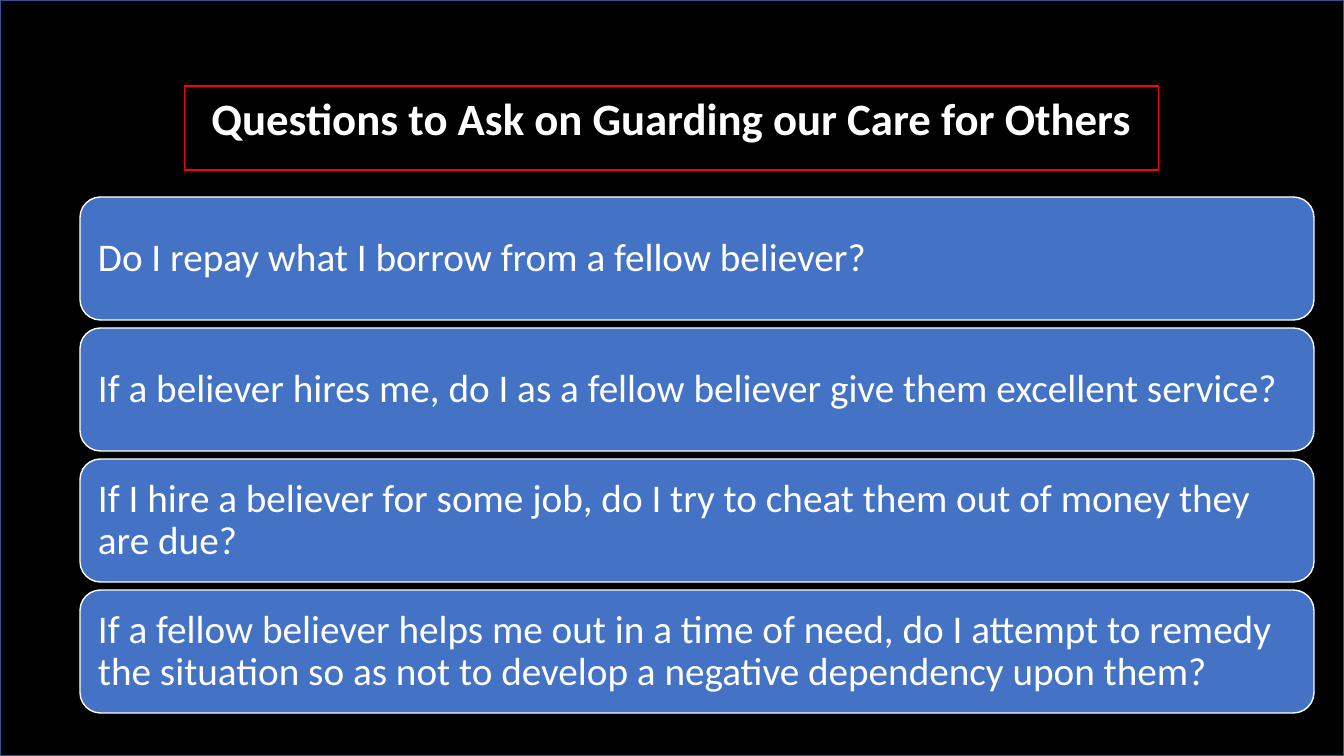
from pptx import Presentation
from pptx.dml.color import RGBColor
from pptx.enum.shapes import MSO_SHAPE
from pptx.enum.text import MSO_ANCHOR, MSO_AUTO_SIZE, PP_ALIGN
from pptx.util import Pt

RECTANGLE = MSO_SHAPE.RECTANGLE
ROUNDED = MSO_SHAPE.ROUNDED_RECTANGLE
MIDDLE, TOP = MSO_ANCHOR.MIDDLE, MSO_ANCHOR.TOP
CENTER, LEFT = PP_ALIGN.CENTER, PP_ALIGN.LEFT
FIT_SHAPE = MSO_AUTO_SIZE.SHAPE_TO_FIT_TEXT

BLACK = RGBColor(0x00, 0x00, 0x00)
WHITE = RGBColor(0xFF, 0xFF, 0xFF)
RED = RGBColor(0xFF, 0x00, 0x00)
BLUE = RGBColor(0x44, 0x72, 0xC4)
DARK_BLUE = RGBColor(0x32, 0x54, 0x91)

WIDTH, HEIGHT = 1344, 756
BOX_LEFT, BOX_TOP, BOX_WIDTH, BOX_HEIGHT = 80, 197, 1234, 123
BOX_PITCH = 131
BOX_INSET = 18

QUESTIONS = [
    "Do I repay what I borrow from a fellow believer?",
    "If a believer hires me, do I as a fellow believer give them excellent service?",
    "If I hire a believer for some job, do I try to cheat them out of money they are due?",
    "If a fellow believer helps me out in a time of need, do I attempt to remedy "
    "the situation so as not to develop a negative dependency upon them?",
]


def px(length):
    """Turn px into EMU, at 100.8 px to the inch."""
    return round(length * 914400 / 100.8)


def set_text(shape, text, size, alignment, bold=False):
    shape.text_frame.text = text
    paragraph = shape.text_frame.paragraphs[0]
    paragraph.alignment = alignment
    font = paragraph.runs[0].font
    font.name, font.size, font.bold = "Calibri", Pt(size), bold
    font.color.rgb = WHITE
    return paragraph


presentation = Presentation()
presentation.slide_width = px(WIDTH)
presentation.slide_height = px(HEIGHT)
slide = presentation.slides.add_slide(presentation.slide_layouts[5])
shapes = slide.shapes

# Backdrop, sent behind the title
backdrop = shapes.add_shape(RECTANGLE, 0, 0, px(WIDTH), px(HEIGHT))
backdrop.shadow.inherit = False
backdrop.fill.solid()
backdrop.fill.fore_color.rgb = BLACK
backdrop.line.color.rgb = DARK_BLUE
backdrop.line.width = Pt(1)
shapes.title.element.addprevious(backdrop.element)

# Title
title = shapes.title
title.left, title.top, title.width, title.height = px(184), px(86), px(975), px(65)
title.line.color.rgb = RED
title.line.width = Pt(0.75)
title.text_frame.vertical_anchor = TOP
title.text_frame.auto_size = FIT_SHAPE
set_text(title, "Questions to Ask on Guarding our Care for Others", 32, CENTER, bold=True)

# Question boxes
for index, question in enumerate(QUESTIONS):
    box = shapes.add_shape(ROUNDED, px(BOX_LEFT), px(BOX_TOP + index * BOX_PITCH),
                           px(BOX_WIDTH), px(BOX_HEIGHT))
    box.shadow.inherit = False
    box.fill.solid()
    box.fill.fore_color.rgb = BLUE
    box.line.color.rgb = WHITE
    box.line.width = Pt(1)
    frame = box.text_frame
    frame.word_wrap = True
    frame.vertical_anchor = MIDDLE
    # A rounded rectangle already insets its text by about 6 px
    frame.margin_left = frame.margin_right = px(BOX_INSET - 6)
    paragraph = set_text(box, question, 28, LEFT)
    paragraph.line_spacing = 0.9

presentation.save("out.pptx")
